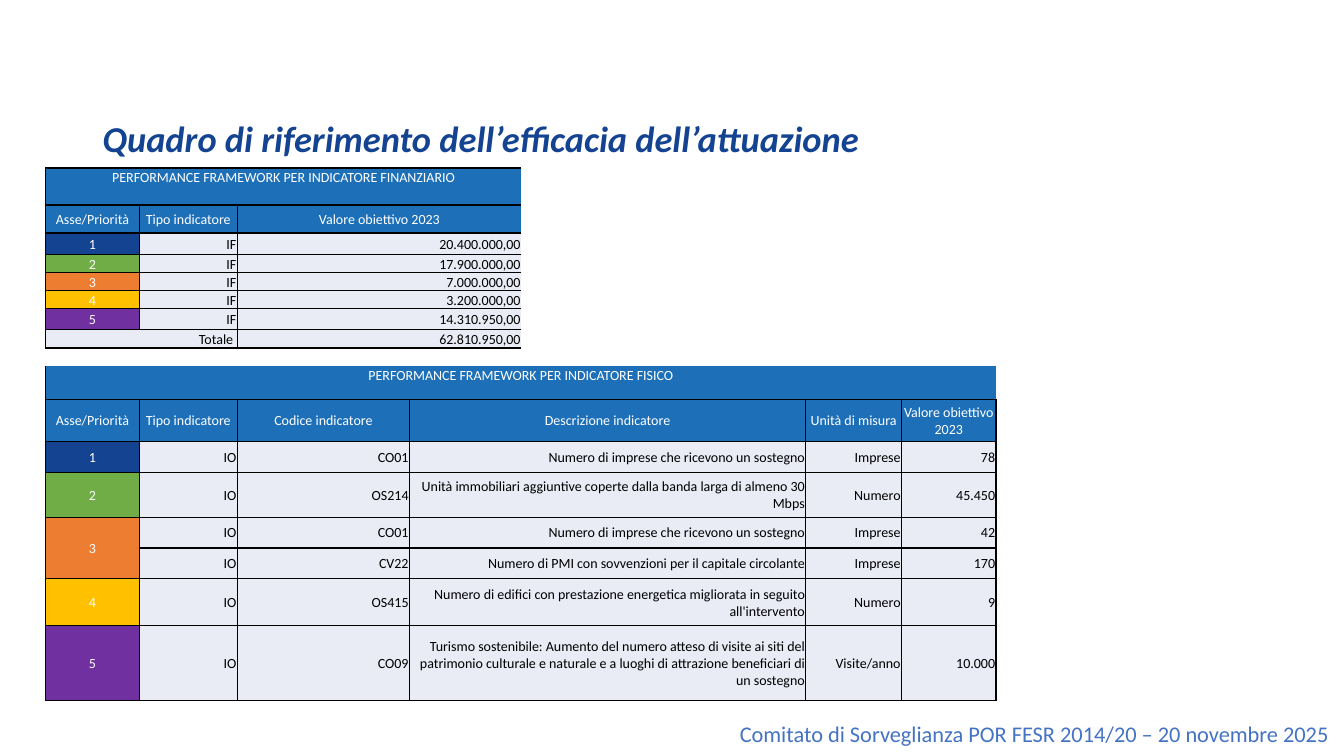
"""Build the performance framework slide with its financial and physical indicators."""
from pptx import Presentation
from pptx.dml.color import RGBColor
from pptx.enum.text import MSO_ANCHOR, MSO_AUTO_SIZE, PP_ALIGN
from pptx.oxml.ns import qn
from pptx.util import Pt
from lxml import etree

LEFT, CENTER, RIGHT = PP_ALIGN.LEFT, PP_ALIGN.CENTER, PP_ALIGN.RIGHT
TOP, MIDDLE = MSO_ANCHOR.TOP, MSO_ANCHOR.MIDDLE
NO_FIT = MSO_AUTO_SIZE.NONE

FONT = "Calibri"
BLUE, PALE, WHITE, BLACK, NAVY = "1D6FB8", "E9EBF5", "FFFFFF", "000000", "144391"
AXIS_FILLS = {"1": NAVY, "2": "70AD47", "3": "ED7D31", "4": "FFC000", "5": "7030A0"}

TITLE = "Quadro di riferimento dell’efficacia dell’attuazione"
FOOTER = "Comitato di Sorveglianza POR FESR 2014/20 – 20 novembre 2025 "

FINANCE_TITLE = "PERFORMANCE FRAMEWORK PER INDICATORE FINANZIARIO"
FINANCE_HEAD = ["Asse/Priorità", "Tipo indicatore", "Valore obiettivo 2023"]
FINANCE = [
    ("1", "IF", "20.400.000,00"),
    ("2", "IF", "17.900.000,00"),
    ("3", "IF", "7.000.000,00"),
    ("4", "IF", "3.200.000,00"),
    ("5", "IF", "14.310.950,00"),
]
TOTAL = ("Totale ", "62.810.950,00")

PHYSICAL_TITLE = "PERFORMANCE FRAMEWORK PER INDICATORE FISICO"
PHYSICAL_HEAD = ["Asse/Priorità", "Tipo indicatore", "Codice indicatore",
                 "Descrizione indicatore", "Unità di misura", "Valore obiettivo 2023"]
PHYSICAL = [
    ("1", "IO", "CO01", "Numero di imprese che ricevono un sostegno", "Imprese", "78"),
    ("2", "IO", "OS214", "Unità immobiliari aggiuntive coperte dalla banda larga "
     "di almeno 30 Mbps", "Numero", "45.450"),
    ("3", "IO", "CO01", "Numero di imprese che ricevono un sostegno", "Imprese", "42"),
    ("", "IO", "CV22", "Numero di PMI con sovvenzioni per il capitale circolante",
     "Imprese", "170"),
    ("4", "IO", "OS415", "Numero di edifici con prestazione energetica migliorata "
     "in seguito all'intervento", "Numero", "9"),
    ("5", "IO", "CO09", "Turismo sostenibile: Aumento del numero atteso di visite ai siti "
     "del patrimonio culturale e naturale e a luoghi di attrazione beneficiari di un sostegno",
     "Visite/anno", "10.000"),
]

COL_WIDTHS = [67, 70, 123, 80, 203, 68.5, 67.5]
ROW_HEIGHTS = [26.5, 20, 15.5, 13, 12.5, 12.5, 15, 13, 13,
               24, 30, 22, 32, 22, 22, 33.5, 53.5]
FINANCE_COLS = [(0, 1), (1, 1), (2, 2)]
PHYSICAL_COLS = [(0, 1), (1, 1), (2, 1), (3, 2), (5, 1), (6, 1)]


def rgb(color):
    return RGBColor.from_string(color)


def style(p, size, color, align):
    p.alignment = align
    p.font.name, p.font.size = FONT, Pt(size)
    p.font.color.rgb = rgb(color)


def set_borders(cell, sides):
    tc_pr = cell._tc.get_or_add_tcPr()
    for side in "LRTB":
        ln = etree.SubElement(tc_pr, qn("a:ln" + side), w=str(Pt(1)))
        if side in sides:
            fill = etree.SubElement(ln, qn("a:solidFill"))
            etree.SubElement(fill, qn("a:srgbClr"), val=BLACK)
        else:
            etree.SubElement(ln, qn("a:noFill"))


def add_block(table, row, col, rows=1, cols=1, text="", fill=None, color=BLACK,
              align=RIGHT, anchor=MIDDLE, sides="LRTB"):
    last_row, last_col = row + rows - 1, col + cols - 1
    for i in range(row, last_row + 1):
        for j in range(col, last_col + 1):
            cell = table.cell(i, j)
            edges = {"L": j == col, "R": j == last_col, "T": i == row, "B": i == last_row}
            set_borders(cell, [s for s in sides if edges[s]])
            if fill:
                cell.fill.solid()
                cell.fill.fore_color.rgb = rgb(fill)
            else:
                cell.fill.background()
            cell.margin_left = cell.margin_right = cell.margin_top = Pt(0.7)
            cell.margin_bottom = 0
            p = cell.text_frame.paragraphs[0]
            if not (text and i == row and j == col):
                etree.SubElement(p._p, qn("a:endParaRPr"), sz="800")
    cell = table.cell(row, col)
    if rows * cols > 1:
        cell.merge(table.cell(last_row, last_col))
    cell.vertical_anchor = anchor
    if text:
        p = cell.text_frame.paragraphs[0]
        p.add_run().text = text
        style(p, 10, color, align)


def add_section(table, top, title, head, body, columns, width, title_sides, last_sides):
    heading = {"fill": BLUE, "color": WHITE, "align": CENTER}
    add_block(table, top, 0, cols=width, text=title, anchor=TOP, sides=title_sides, **heading)
    for (col, span), text in zip(columns, head):
        sides = last_sides if col + span == width else "LRTB"
        add_block(table, top + 1, col, cols=span, text=text, sides=sides, **heading)
    for i, record in enumerate(body):
        row = top + 2 + i
        axis = record[0]
        if axis:
            rows = 2 if i + 1 < len(body) and not body[i + 1][0] else 1
            add_block(table, row, 0, rows=rows, text=axis, fill=AXIS_FILLS[axis],
                      color=WHITE, align=CENTER)
        for (col, span), text in zip(columns[1:], record[1:]):
            sides = last_sides if col + span == width else "LRTB"
            add_block(table, row, col, cols=span, text=text, fill=PALE, sides=sides)


def main():
    prs = Presentation()
    prs.slide_width, prs.slide_height = Pt(960), Pt(540)
    s = prs.slides.add_slide(prs.slide_layouts[5])

    sp = s.shapes.title
    sp.left, sp.top, sp.width, sp.height = Pt(66), Pt(29), Pt(828), Pt(104)
    tf = sp.text_frame
    tf.auto_size, tf.vertical_anchor = NO_FIT, MIDDLE
    tf.margin_top, tf.margin_bottom = Pt(42), Pt(3.6)
    p = tf.paragraphs[0]
    p.add_run().text = TITLE
    p.line_spacing = 0.9
    style(p, 26, NAVY, LEFT)
    p.font.bold = p.font.italic = True

    frame = s.shapes.add_table(len(ROW_HEIGHTS), len(COL_WIDTHS), Pt(32.5), Pt(120),
                               Pt(sum(COL_WIDTHS)), Pt(sum(ROW_HEIGHTS)))
    table = frame.table
    table.first_row = table.horz_banding = False
    for column, width in zip(table.columns, COL_WIDTHS):
        column.width = Pt(width)
    for row, height in zip(table.rows, ROW_HEIGHTS):
        row.height = Pt(height)

    add_section(table, 0, FINANCE_TITLE, FINANCE_HEAD, FINANCE, FINANCE_COLS, 4, "LTB", "LTB")
    add_block(table, 7, 0, cols=2, text=TOTAL[0], fill=PALE)
    add_block(table, 7, 2, cols=2, text=TOTAL[1], fill=PALE, sides="LTB")
    add_block(table, 8, 0, cols=4, fill=WHITE, sides="T")
    add_block(table, 0, 4, rows=9, cols=3, sides="")
    add_section(table, 9, PHYSICAL_TITLE, PHYSICAL_HEAD, PHYSICAL, PHYSICAL_COLS, 7,
                "LRB", "LRTB")

    sp = s.shapes.add_textbox(Pt(417), Pt(511), Pt(543), Pt(27))
    tf = sp.text_frame
    tf.word_wrap = True
    p = tf.paragraphs[0]
    p.add_run().text = FOOTER
    style(p, 16, "4472C4", RIGHT)

    prs.save("out.pptx")


if __name__ == "__main__":
    main()
